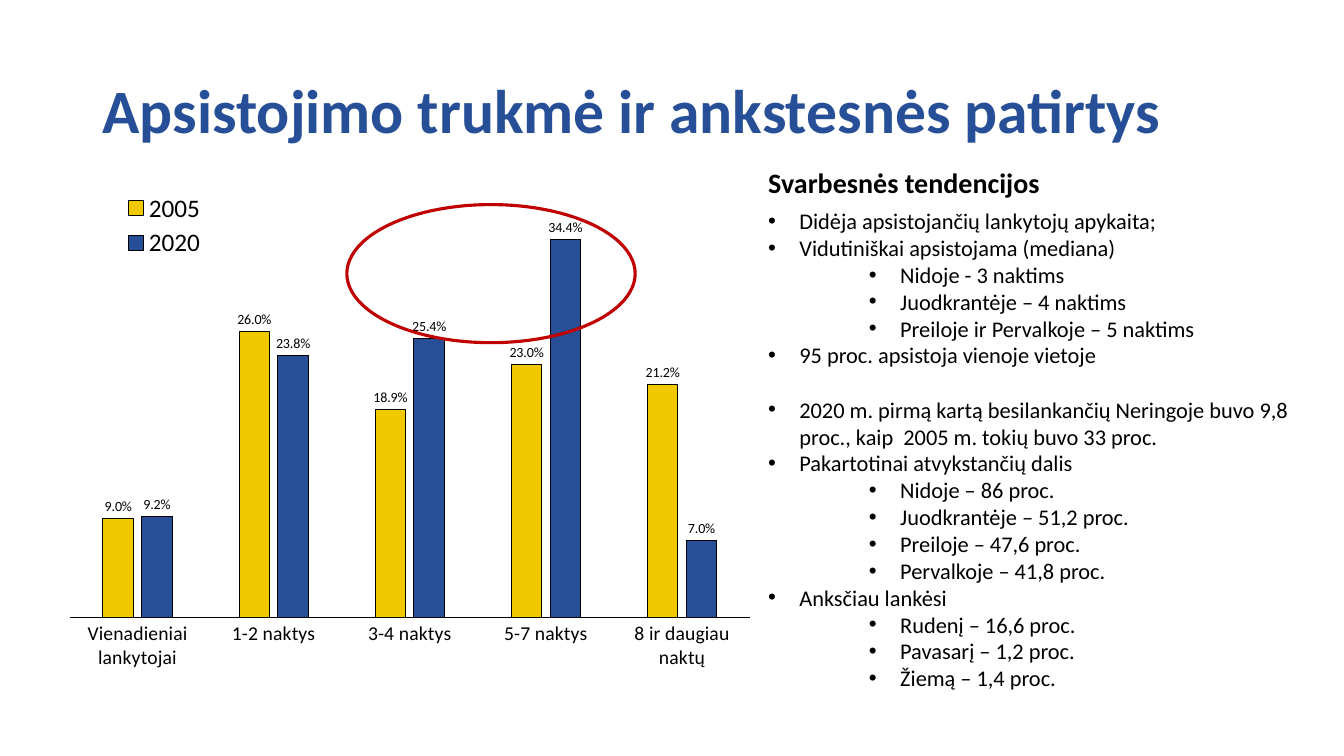
import pptx
import pptx.chart.data
import pptx.dml.color
import pptx.enum.chart
import pptx.enum.dml
import pptx.enum.shapes
import pptx.enum.text
import pptx.oxml
import pptx.oxml.ns
import pptx.util

Inches = pptx.util.Inches
Pt = pptx.util.Pt
FONT = "Calibri"
COLOURS = {"blue": "264F97", "yellow": "F0C900", "red": "C00000", "black": "000000"}
PERCENT = "0.0\\%"
NIGHTS = ["Vienadieniai lankytojai", "1-2 naktys", "3-4 naktys", "5-7 naktys", "8 ir daugiau naktų"]
SHARES = {
    "2005": ("yellow", [9, 26, 18.9, 23, 21.2]),
    "2020": ("blue", [9.2, 23.8, 25.4, 34.4, 7]),
}
TREND_GROUPS = [
    [
        ("Didėja apsistojančių lankytojų apykaita;", []),
        ("Vidutiniškai apsistojama (mediana)",
         ["Nidoje - 3 naktims", "Juodkrantėje – 4 naktims", "Preiloje ir Pervalkoje – 5 naktims"]),
        ("95 proc. apsistoja vienoje vietoje", []),
    ],
    [
        ("2020 m. pirmą kartą besilankančių Neringoje buvo 9,8 proc., kaip  2005 m. tokių buvo 33 proc.", []),
        ("Pakartotinai atvykstančių dalis",
         ["Nidoje – 86 proc.", "Juodkrantėje – 51,2 proc.", "Preiloje – 47,6 proc.", "Pervalkoje – 41,8 proc."]),
        ("Anksčiau lankėsi", ["Rudenį – 16,6 proc.", "Pavasarį – 1,2 proc.", "Žiemą – 1,4 proc."]),
    ],
]


def colour(name):
    """Return the named colour."""
    return pptx.dml.color.RGBColor.from_string(COLOURS[name])


def style_font(font, size, name="black", bold=False):
    """Set typeface, size, colour and weight."""
    font.name = FONT
    font.size = Pt(size)
    font.bold = bold
    font.color.rgb = colour(name)


def style_line(line, name, width):
    """Set the colour and width of a line."""
    line.color.rgb = colour(name)
    line.width = Pt(width)


def add_span(para, text, size, name="black", bold=False):
    """Add one styled run to a paragraph."""
    span = para.add_run()
    span.text = text
    style_font(span.font, size, name, bold)


def add_frame(page, left, top, width, height):
    """Add a wrapping text box and return its frame."""
    box = page.shapes.add_textbox(Inches(left), Inches(top), Inches(width), Inches(height))
    box.text_frame.word_wrap = True
    return box.text_frame


def add_title(page, left, top, width, height):
    """Add the slide heading."""
    frame = add_frame(page, left, top, width, height)
    frame.vertical_anchor = pptx.enum.text.MSO_ANCHOR.MIDDLE
    para = frame.paragraphs[0]
    para.line_spacing = 0.9
    add_span(para, "Apsistojimo trukmė ir ankstesnės patirtys", 44, "blue", True)


def make_layout(x, y, w, h, inner=False):
    """Return a manual chart layout in fractions of the chart area."""
    target = '<c:layoutTarget val="inner"/>' if inner else ""
    return pptx.oxml.parse_xml(
        f'<c:layout {pptx.oxml.ns.nsdecls("c")}><c:manualLayout>{target}'
        '<c:xMode val="edge"/><c:yMode val="edge"/>'
        f'<c:x val="{x}"/><c:y val="{y}"/><c:w val="{w}"/><c:h val="{h}"/>'
        '</c:manualLayout></c:layout>')


def place_chart_parts(chart):
    """Fix the positions of the plot and the legend."""
    plot_area = chart._chartSpace.xpath("c:chart/c:plotArea")[0]
    legend = chart.legend._element
    for part in (plot_area, legend):
        for layout in part.xpath("c:layout"):
            part.remove(layout)
    plot_area.insert(0, make_layout(0.02, 0.02, 0.97, 0.78, True))
    legend.xpath("c:legendPos")[0].addnext(make_layout(0.08, 0.04, 0.15, 0.13))


def add_stay_chart(page, left, top, width, height):
    """Add the length-of-stay columns and the ring around the growth."""
    data = pptx.chart.data.CategoryChartData(number_format=PERCENT)
    data.categories = NIGHTS
    for year, (_, values) in SHARES.items():
        data.add_series(year, values)
    chart = page.shapes.add_chart(
        pptx.enum.chart.XL_CHART_TYPE.COLUMN_CLUSTERED,
        Inches(left), Inches(top), Inches(width), Inches(height), data).chart
    chart.has_title = False
    style_font(chart.font, 10)

    chart.has_legend = True
    chart.legend.position = pptx.enum.chart.XL_LEGEND_POSITION.BOTTOM
    chart.legend.include_in_layout = False
    style_font(chart.legend.font, 18)
    place_chart_parts(chart)

    nights = chart.category_axis
    nights.major_tick_mark = pptx.enum.chart.XL_TICK_MARK.NONE
    style_font(nights.tick_labels.font, 14)
    style_line(nights.format.line, "black", 0.75)
    shares = chart.value_axis
    shares.minimum_scale, shares.maximum_scale = 0, 40
    shares.has_major_gridlines = False
    shares.visible = False

    plot = chart.plots[0]
    plot.gap_width, plot.overlap = 219, -27
    plot.vary_by_categories = False
    for series, (name, _) in zip(plot.series, SHARES.values()):
        series.format.fill.solid()
        series.format.fill.fore_color.rgb = colour(name)
        style_line(series.format.line, "black", 0.75)
        labels = series.data_labels
        labels.show_value = True
        labels.position = pptx.enum.chart.XL_LABEL_POSITION.OUTSIDE_END
        labels.number_format = PERCENT
        labels.number_format_is_linked = False
        style_font(labels.font, 10)

    ring = page.shapes.add_shape(
        pptx.enum.shapes.MSO_SHAPE.OVAL,
        Inches(left + 2.89), Inches(top + 0.38), Inches(2.86), Inches(1.37))
    ring.shadow.inherit = False
    ring.fill.background()
    style_line(ring.line, "red", 2.25)


def add_bullet(frame, text, level, space_before=0):
    """Add one bulleted paragraph; level 1 is indented by an inch."""
    para = frame.add_paragraph()
    para.level = 2 * level
    para.space_before = Pt(space_before)
    settings = para._p.get_or_add_pPr()
    settings.set("marL", str(Inches(0.31 + level)))
    settings.set("indent", str(Inches(-0.31)))
    for tag in ('a:buFont {} typeface="Arial"', 'a:buChar {} char="•"'):
        settings.append(pptx.oxml.parse_xml("<" + tag.format(pptx.oxml.ns.nsdecls("a")) + "/>"))
    add_span(para, text, 16)


def add_trends(page, left, top, width, height):
    """Add the list of main trends."""
    frame = add_frame(page, left, top, width, height)
    heading = frame.paragraphs[0]
    heading.space_before = heading.space_after = Pt(6)
    add_span(heading, "Svarbesnės tendencijos", 20, bold=True)
    for group_index, group in enumerate(TREND_GROUPS):
        for trend_index, (trend, details) in enumerate(group):
            starts_group = group_index > 0 and trend_index == 0
            add_bullet(frame, trend, 0, 19.5 if starts_group else 0)
            for detail in details:
                add_bullet(frame, detail, 1)


def main():
    """Build and save the slide."""
    deck = pptx.Presentation()
    deck.slide_width, deck.slide_height = Inches(13.33), Inches(7.5)
    page = deck.slides.add_slide(deck.slide_layouts[6])
    add_title(page, 0.92, 0.4, 11.5, 1.45)
    add_stay_chart(page, 0.55, 1.65, 6.96, 5.6)
    add_trends(page, 7.52, 1.59, 5.69, 5.65)
    deck.save("out.pptx")


if __name__ == "__main__":
    main()
